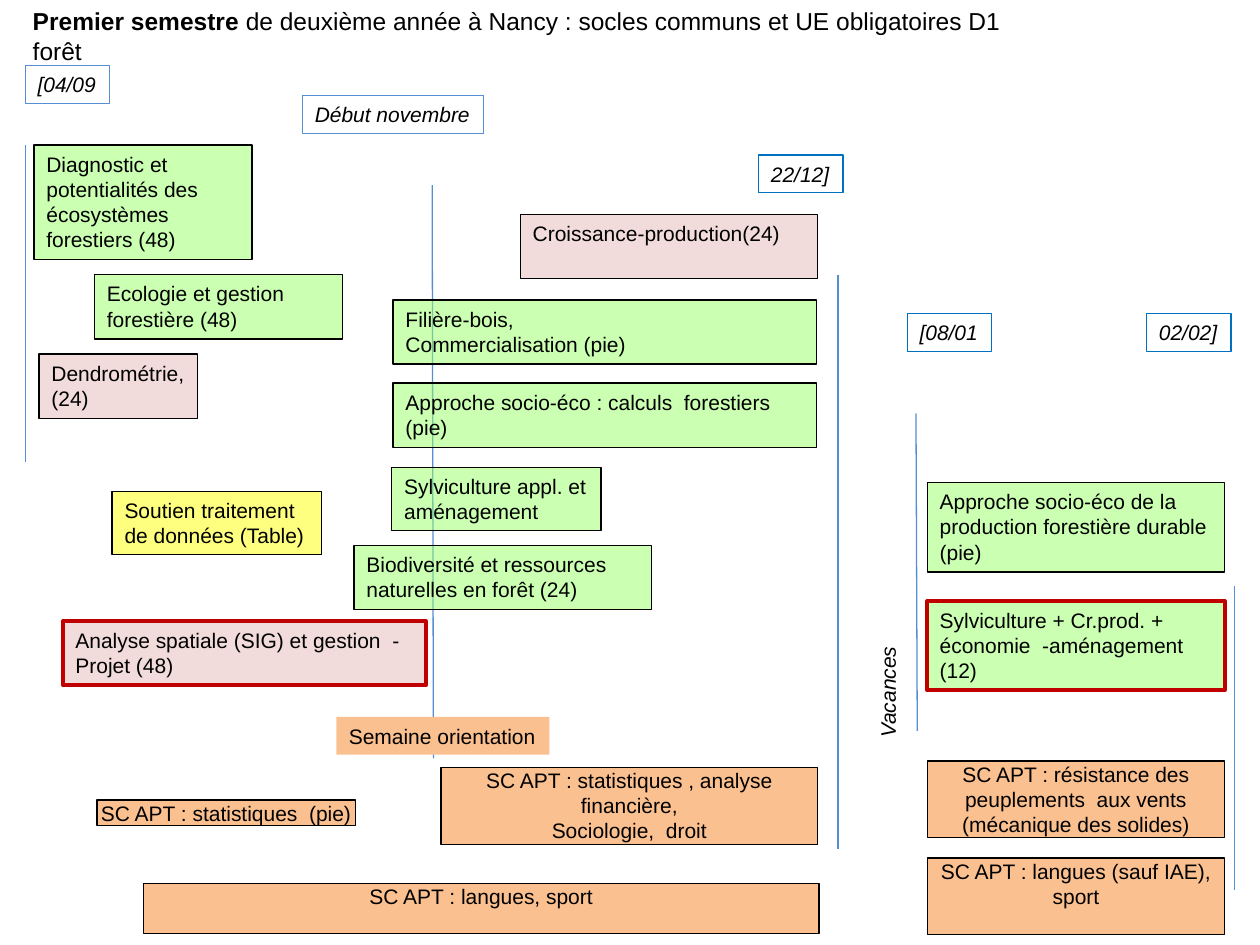
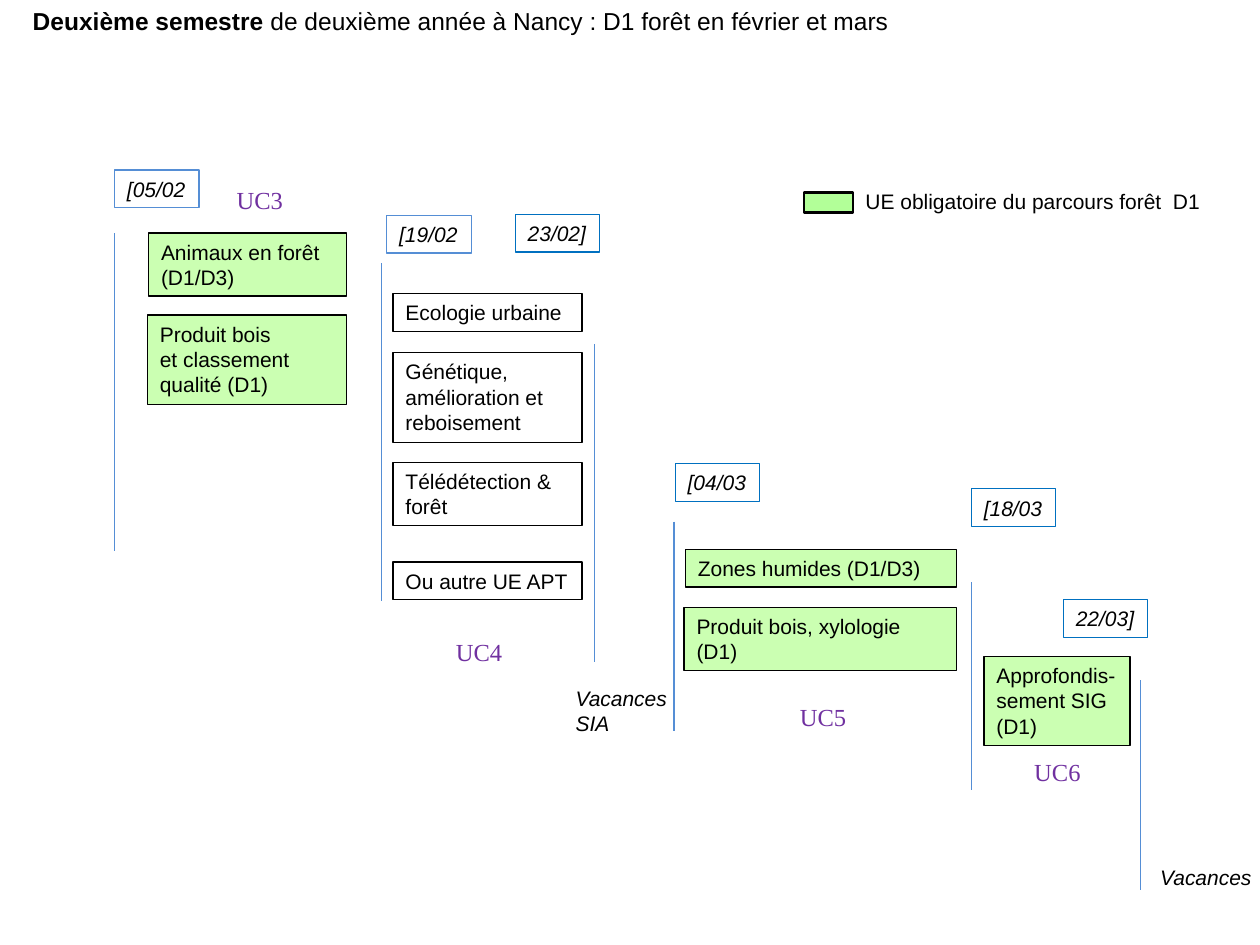
"""Two timeline slides of the second-year forestry courses in Nancy."""
from dataclasses import dataclass

from lxml import etree
from pptx import Presentation
from pptx import util as u
from pptx.dml.color import RGBColor
from pptx.enum import shapes, text
from pptx.oxml.ns import qn

PX = 9144


@dataclass(frozen=True)
class Theme:
    font: str = "Arial"
    unit_font: str = "Times New Roman"
    title_size: int = 14
    body_size: int = 12
    black: str = "000000"
    purple: str = "7030A0"
    red: str = "C00000"
    sky: str = "558ED5"
    blue: str = "0070C0"
    green: str = "99FF66"
    key_green: str = "66FF33"
    pink: str = "E6B9B8"
    yellow: str = "FFFF00"
    orange: str = "FAC090"
    thin: float = 0.75
    medium: float = 1.5
    thick: float = 2.25


theme = Theme()

course = dict(border=theme.black)
common = dict(fill=theme.orange, border=theme.black, align="CENTER", inset=0)
note = dict(italic=True, wrap=False)
STYLES = {
    "course": course,
    "forest": dict(course, fill=theme.green, alpha=50),
    "measure": dict(course, fill=theme.pink, alpha=50),
    "support": dict(course, fill=theme.yellow, alpha=50),
    "forest project": dict(fill=theme.green, alpha=50, border=theme.red, weight=theme.thick),
    "measure project": dict(fill=theme.pink, alpha=50, border=theme.red, weight=theme.thick),
    "key": dict(course, fill=theme.key_green, alpha=50, weight=theme.medium),
    "common": common,
    "orientation": dict(fill=theme.orange, wrap=False),
    "sky date": dict(note, border=theme.sky),
    "blue date": dict(note, border=theme.blue),
    "note": note,
    "side note": dict(note, rotation=270),
    "label": dict(wrap=False),
    "unit": dict(font=theme.unit_font, size=theme.title_size, color=theme.purple, wrap=False),
}

SLIDES = [
    dict(
        title=("Premier semestre ",
               "de deuxième année à Nancy : socles communs et UE obligatoires D1 forêt"),
        lines=[
            (20, 115, 20, 367),
            (343, 147, 344, 602),
            (665, 218, 665, 674),
            (727, 328, 728, 580),
            (980, 465, 980, 706),
        ],
        boxes=[
            ("sky date", 20, 52, 67, 30, "[04/09"),
            ("sky date", 240, 76, 144, 30, "Début novembre"),
            ("blue date", 602, 123, 67, 30, "22/12]"),
            ("blue date", 720, 249, 67, 30, "[08/01"),
            ("blue date", 910, 249, 67, 30, "02/02]"),
            ("side note", 658, 534, 93, 30, "Vacances"),
            ("forest", 27, 115, 173, 91,
             "Diagnostic et potentialités des écosystèmes forestiers (48)"),
            ("forest", 75, 218, 197, 51, "Ecologie et gestion forestière (48)"),
            ("measure", 31, 281, 126, 51, "Dendrométrie,\n(24)"),
            ("support", 89, 390, 166, 50, "Soutien traitement de données (Table)"),
            ("measure project", 50, 493, 288, 51,
             "Analyse spatiale (SIG) et gestion  - Projet (48)"),
            ("measure", 413, 170, 236, 51, "Croissance-production(24)"),
            ("forest", 312, 238, 336, 51, "Filière-bois,\nCommercialisation (pie)"),
            ("forest", 312, 304, 336, 51, "Approche socio-éco : calculs  forestiers (pie)"),
            ("forest", 311, 371, 166, 50, "Sylviculture appl. et aménagement"),
            ("forest", 281, 433, 236, 51,
             "Biodiversité et ressources naturelles en forêt (24)"),
            ("forest", 736, 383, 236, 71,
             "Approche socio-éco de la production forestière durable (pie)"),
            ("forest project", 736, 477, 236, 71,
             "Sylviculture + Cr.prod. + économie  -aménagement (12)"),
            ("orientation", 267, 569, 169, 30, "Semaine orientation"),
            ("common", 77, 635, 205, 20, "SC APT : statistiques  (pie)"),
            ("common", 350, 609, 299, 61,
             "SC APT : statistiques , analyse financière,\nSociologie,  droit"),
            ("common", 114, 701, 536, 40, "SC APT : langues, sport"),
            ("common", 736, 604, 236, 61,
             "SC APT : résistance des\npeuplements  aux vents\n(mécanique des solides)"),
            ("common", 736, 681, 236, 61, "SC APT : langues (sauf IAE), sport"),
        ],
    ),
    dict(
        title=("Deuxième semestre ",
               "de deuxième année à Nancy : D1 forêt en février et mars"),
        lines=[
            (91, 185, 91, 437),
            (303, 209, 303, 477),
            (472, 273, 472, 525),
            (535, 414, 535, 580),
            (771, 462, 771, 627),
            (905, 540, 905, 706),
        ],
        boxes=[
            ("key", 638, 153, 39, 16, ""),
            ("label", 677, 145, 288, 30, "UE obligatoire du parcours forêt  D1"),
            ("sky date", 91, 135, 67, 30, "[05/02"),
            ("sky date", 307, 171, 67, 30, "[19/02"),
            ("blue date", 409, 170, 67, 30, "23/02]"),
            ("blue date", 536, 368, 67, 30, "[04/03"),
            ("blue date", 771, 388, 67, 30, "[18/03"),
            ("blue date", 844, 476, 67, 30, "22/03]"),
            ("unit", 178, 142, 57, 34, "UC3"),
            ("unit", 352, 501, 57, 34, "UC4"),
            ("unit", 625, 552, 57, 34, "UC5"),
            ("unit", 811, 596, 57, 34, "UC6"),
            ("forest", 118, 185, 157, 50, "Animaux en forêt (D1/D3)"),
            ("forest", 117, 250, 158, 71, "Produit bois\net classement qualité (D1)"),
            ("course", 312, 233, 150, 30, "Ecologie urbaine"),
            ("course", 312, 280, 150, 71, "Génétique, amélioration et reboisement"),
            ("course", 312, 367, 150, 50, "Télédétection & forêt"),
            ("course", 312, 446, 150, 30, "Ou autre UE APT"),
            ("forest", 544, 436, 215, 30, "Zones humides (D1/D3)"),
            ("forest", 543, 482, 216, 50, "Produit bois, xylologie (D1)"),
            ("forest", 781, 521, 116, 71, "Approfondis-sement SIG (D1)"),
            ("note", 447, 539, 93, 50, "Vacances\nSIA"),
            ("note", 911, 681, 93, 30, "Vacances"),
        ],
    ),
]


def write(box, words, lead="", font=theme.font, size=theme.body_size, color=theme.black,
          italic=False, align="LEFT", wrap=True, inset=10):
    """Fill a box with formatted paragraphs, the first opening with a bold lead."""
    frame = box.text_frame
    frame.word_wrap = wrap
    frame.auto_size = text.MSO_AUTO_SIZE.NONE
    frame.vertical_anchor = text.MSO_ANCHOR.TOP
    frame.margin_left = frame.margin_right = inset * PX
    frame.margin_top = frame.margin_bottom = inset * PX // 2
    for number, line in enumerate(words.split("\n")):
        para = frame.add_paragraph() if number else frame.paragraphs[0]
        para.alignment = getattr(text.PP_ALIGN, align)
        for part, bold in ((lead if number == 0 else "", True), (line, False)):
            if part:
                span = para.add_run()
                span.text = part
                span.font.name = font
                span.font.size = u.Pt(size)
                span.font.bold = bold
                span.font.italic = italic
                span.font.color.rgb = RGBColor.from_string(color)


def add_box(page, area, words, fill=None, alpha=100, border=None, weight=theme.thin,
            rotation=0, **style):
    """Add a rectangle, or a plain text box when it has neither fill nor border."""
    area = [length * PX for length in area]
    if fill or border:
        box = page.shapes.add_shape(shapes.MSO_SHAPE.RECTANGLE, *area)
        box.shadow.inherit = False
    else:
        box = page.shapes.add_textbox(*area)
    box.rotation = rotation
    if fill:
        box.fill.solid()
        box.fill.fore_color.rgb = RGBColor.from_string(fill)
        tint = box._element.spPr.find(".//" + qn("a:srgbClr"))
        etree.SubElement(tint, qn("a:alpha"), val=str(alpha * 1000))
    else:
        box.fill.background()
    if border:
        box.line.color.rgb = RGBColor.from_string(border)
        box.line.width = u.Pt(weight)
    else:
        box.line.fill.background()
    if words:
        write(box, words, **style)


deck = Presentation()
deck.slide_width, deck.slide_height = 1000 * PX, 750 * PX

for content in SLIDES:
    page = deck.slides.add_slide(deck.slide_layouts[5])
    title = page.shapes.title
    title.left, title.top, title.width, title.height = 16 * PX, 0, 820 * PX, 34 * PX
    lead, rest = content["title"]
    write(title, rest, lead=lead, size=theme.title_size)

    for ends in content["lines"]:
        marker = page.shapes.add_connector(
            shapes.MSO_CONNECTOR.STRAIGHT, *[length * PX for length in ends])
        marker.line.color.rgb = RGBColor.from_string(theme.sky)
        marker.line.width = u.Pt(theme.thin)
        etree.SubElement(marker._element.spPr, qn("a:effectLst"))

    for style, left, top, width, height, words in content["boxes"]:
        add_box(page, (left, top, width, height), words, **STYLES[style])

deck.save("out.pptx")
